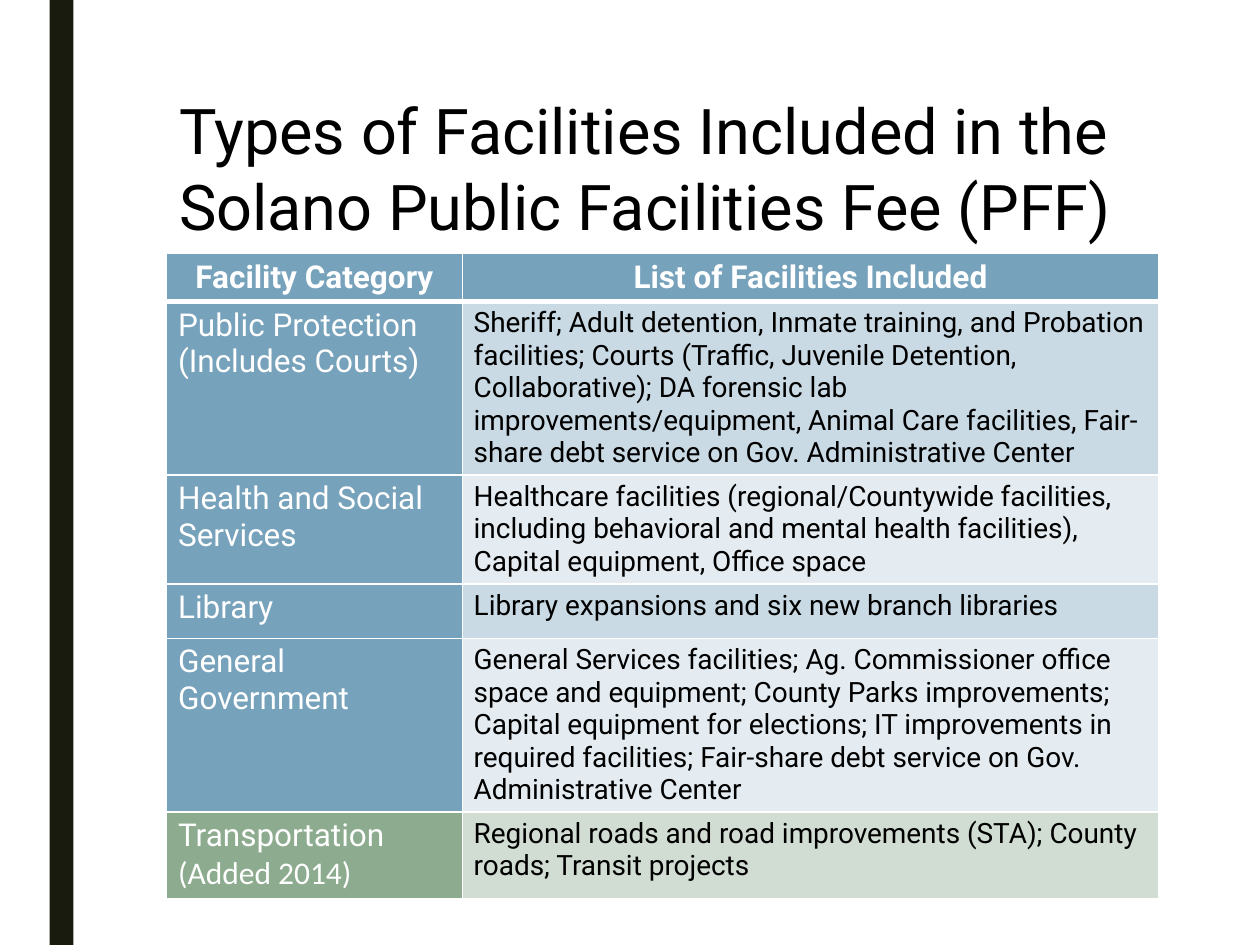
from lxml.etree import SubElement
from pptx import Presentation
from pptx.dml.color import RGBColor
from pptx.enum.shapes import MSO_SHAPE
from pptx.enum.text import MSO_ANCHOR, PP_ALIGN
from pptx.oxml.ns import qn
from pptx.util import Cm, Pt

WHITE = RGBColor(0xFF, 0xFF, 0xFF)
BLACK = RGBColor(0x00, 0x00, 0x00)
OLIVE = RGBColor(0x19, 0x1B, 0x0E)
BLUE = RGBColor(0x77, 0xA2, 0xBB)
BLUE_TINT = RGBColor(0xC9, 0xDA, 0xE4)
BLUE_PALE = RGBColor(0xE4, 0xEC, 0xF1)
GREEN = RGBColor(0x8D, 0xAB, 0x8E)
GREEN_TINT = RGBColor(0xD1, 0xDD, 0xD2)

TITLE = "Types of Facilities Included in the Solano Public Facilities Fee (PFF)"
HEADINGS = ("Facility Category", "List of Facilities Included")
# category, facilities, category fill, facilities fill, row height in cm
FACILITIES = [
    ("Public Protection (Includes Courts)",
     "Sheriff; Adult detention, Inmate training, and Probation facilities; "
     "Courts (Traffic, Juvenile Detention, Collaborative); DA forensic lab "
     "improvements/equipment, Animal Care facilities, Fair-share debt service "
     "on Gov. Administrative Center", BLUE, BLUE_TINT, 3.5),
    ("Health and Social Services",
     "Healthcare facilities (regional/Countywide facilities, including "
     "behavioral and mental health facilities), Capital equipment, "
     "Office space", BLUE, BLUE_PALE, 2.2),
    ("Library",
     "Library expansions and six new branch libraries",
     BLUE, BLUE_TINT, 1.09),
    ("General Government",
     "General Services facilities; Ag. Commissioner office space and "
     "equipment; County Parks improvements; Capital equipment for elections; "
     "IT improvements in required facilities; Fair-share debt service on Gov. "
     "Administrative Center", BLUE, BLUE_PALE, 3.5),
    ("Transportation\n(Added 2014)",
     "Regional roads and road improvements (STA); County roads; "
     "Transit projects", GREEN, GREEN_TINT, 1.74),
]


class SlideBuilder:
    def __init__(self, slide, font="Roboto"):
        self.slide = slide
        self.font = font

    def set_text(self, frame, text, size, color, bold=False,
                 align=PP_ALIGN.LEFT):
        frame.text = text
        frame.word_wrap = True
        for paragraph in frame.paragraphs:
            paragraph.alignment = align
            for run in paragraph.runs:
                run.font.name = self.font
                run.font.size = Pt(size)
                run.font.bold = bold
                run.font.color.rgb = color

    def bar(self, left, top, width, height, color):
        stripe = self.slide.shapes.add_shape(
            MSO_SHAPE.RECTANGLE, Cm(left), Cm(top), Cm(width), Cm(height))
        stripe.shadow.inherit = False
        stripe.fill.solid()
        stripe.fill.fore_color.rgb = color
        stripe.line.fill.background()

    def title(self, left, top, width, height, text):
        heading = self.slide.shapes.add_textbox(
            Cm(left), Cm(top), Cm(width), Cm(height)).text_frame
        self.set_text(heading, text, 36, BLACK)
        heading.vertical_anchor = MSO_ANCHOR.MIDDLE
        heading.margin_bottom = Cm(0.88)

    def table(self, left, top, column_widths, row_heights):
        grid = self.slide.shapes.add_table(
            len(row_heights), len(column_widths), Cm(left), Cm(top),
            Cm(sum(column_widths)), Cm(sum(row_heights))).table
        for column, width in zip(grid.columns, column_widths):
            column.width = Cm(width)
        for row, height in zip(grid.rows, row_heights):
            row.height = Cm(height)
        return grid

    def cell(self, cell, text, size, color, fill, top=1, bottom=1, **style):
        """Fill one cell; top and bottom are border widths in points."""
        self.set_text(cell.text_frame, text, size, color, **style)
        cell.margin_left = cell.margin_right = Cm(0.23)
        cell.margin_top = cell.margin_bottom = Cm(0.11)
        borders = {"a:lnL": 1, "a:lnR": 1, "a:lnT": top, "a:lnB": bottom}
        properties = cell._tc.get_or_add_tcPr()
        for tag, width in borders.items():
            border = SubElement(properties, qn(tag), w=str(Pt(width)))
            paint = SubElement(border, qn("a:solidFill"))
            SubElement(paint, qn("a:srgbClr"), val=str(WHITE))
        cell.fill.solid()
        cell.fill.fore_color.rgb = fill


def main():
    presentation = Presentation()
    presentation.slide_width = Cm(25.4)
    presentation.slide_height = Cm(19.05)
    builder = SlideBuilder(
        presentation.slides.add_slide(presentation.slide_layouts[6]))

    builder.bar(1, 0, 0.48, 19.05, OLIVE)

    heights = [0.95] + [facility[-1] for facility in FACILITIES]
    grid = builder.table(3.36, 5.11, (5.96, 14.04), heights)
    for column, heading in enumerate(HEADINGS):
        builder.cell(grid.cell(0, column), heading, 18, WHITE, BLUE,
                     bottom=3, bold=True, align=PP_ALIGN.CENTER)
    for row, (category, included, strong, tint, _) in enumerate(FACILITIES, 1):
        top = 3 if row == 1 else 1
        builder.cell(grid.cell(row, 0), category, 18, WHITE, strong, top)
        builder.cell(grid.cell(row, 1), included, 16, BLACK, tint, top)
    added_note = grid.cell(len(FACILITIES), 0).text_frame.paragraphs[1]
    added_note.runs[0].font.name = "Calibri"

    builder.title(3.36, 1.7, 20, 4.11, TITLE)
    presentation.save("out.pptx")


if __name__ == "__main__":
    main()
